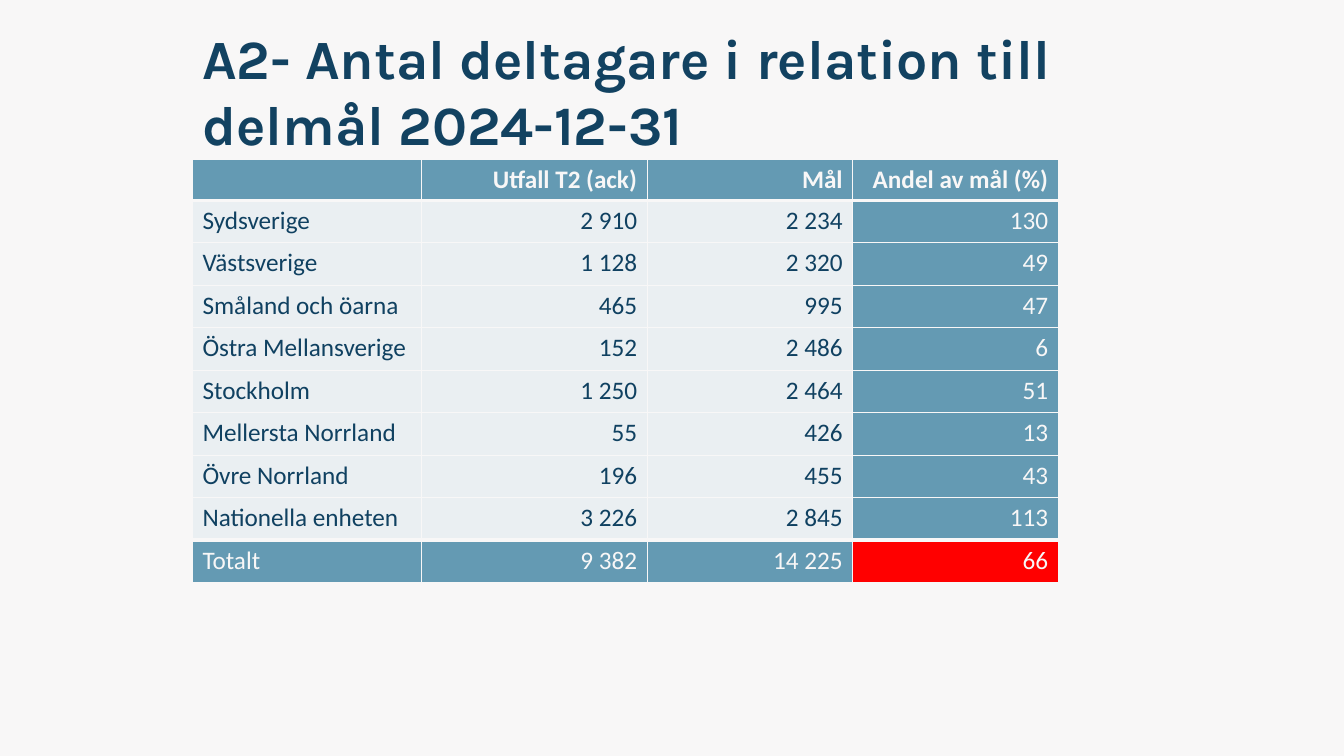
import pptx
import pptx.util
import pptx.dml.color
import pptx.enum.text
import pptx.oxml.ns
from dataclasses import dataclass
from lxml import etree
from pptx.util import Cm, Pt


@dataclass(frozen=True)
class Theme:
    light: str = "F8F7F7"
    title: str = "124261"
    text: str = "104161"
    blue: str = "649AB3"
    pale: str = "EAEFF2"
    alert: str = "FF0000"
    title_font: str = "Karla"
    body_font: str = "Calibri"
    title_size: float = 39.6
    body_size: float = 18


theme = Theme()
rgb = pptx.dml.color.RGBColor.from_string
ALIGN = pptx.enum.text.PP_ALIGN


def style(p, font, size, color, bold):
    for r in p.runs:
        r.font.name = font
        r.font.size = Pt(size)
        r.font.color.rgb = rgb(color)
        r.font.bold = bold


def set_borders(cell, color, top, bottom):
    """Draw all four cell borders; top and bottom are widths in points."""
    tcPr = cell._tc.get_or_add_tcPr()
    widths = {"lnL": 1, "lnR": 1, "lnT": top, "lnB": bottom}
    for i, (tag, width) in enumerate(widths.items()):
        ln = etree.Element(pptx.oxml.ns.qn(f"a:{tag}"), w=str(Pt(width)))
        fill = etree.SubElement(ln, pptx.oxml.ns.qn("a:solidFill"))
        etree.SubElement(fill, pptx.oxml.ns.qn("a:srgbClr"), val=color)
        tcPr.insert(i, ln)


prs = pptx.Presentation()
prs.slide_width, prs.slide_height = Cm(33.87), Cm(19.05)
s = prs.slides.add_slide(prs.slide_layouts[6])
s.background.fill.solid()
s.background.fill.fore_color.rgb = rgb(theme.light)

# Title
title = s.shapes.add_textbox(Cm(4.85), Cm(1.02), Cm(22.45), Cm(2.51))
tf = title.text_frame
tf.word_wrap = True
tf.vertical_anchor = pptx.enum.text.MSO_ANCHOR.MIDDLE
tf.text = "A2- Antal deltagare i relation till delmål 2024-12-31"
style(tf.paragraphs[0], theme.title_font, theme.title_size, theme.title, True)

# Table of participants against target
rows = [
    ("", "Utfall T2 (ack)", "Mål", "Andel av mål (%)"),
    ("Sydsverige", "2 910", "2 234", "130"),
    ("Västsverige", "1 128", "2 320", "49"),
    ("Småland och öarna", "465", "995", "47"),
    ("Östra Mellansverige", "152", "2 486", "6"),
    ("Stockholm", "1 250", "2 464", "51"),
    ("Mellersta Norrland", "55", "426", "13"),
    ("Övre Norrland", "196", "455", "43"),
    ("Nationella enheten", "3 226", "2 845", "113"),
    ("Totalt", "9 382", "14 225", "66"),
]
col_widths = [5.77, 5.69, 5.18, 5.18]
header_height, row_height = 1.03, 1.07
last_row, last_col = len(rows) - 1, len(col_widths) - 1

table = s.shapes.add_table(
    len(rows), len(col_widths), Cm(4.85), Cm(4.02),
    Cm(sum(col_widths)), Cm(header_height + last_row * row_height)).table
for col, width in zip(table.columns, col_widths):
    col.width = Cm(width)

for i, values in enumerate(rows):
    table.rows[i].height = Cm(row_height if i else header_height)
    for j, value in enumerate(values):
        cell = table.cell(i, j)
        strong = i in (0, last_row) or j == last_col
        fill = theme.blue if strong else theme.pale
        if (i, j) == (last_row, last_col):
            fill = theme.alert
        cell.fill.solid()
        cell.fill.fore_color.rgb = rgb(fill)
        set_borders(cell, theme.light,
                    top=3 if i in (1, last_row) else 1,
                    bottom=3 if i in (0, last_row - 1) else 1)
        cell.text = value
        p = cell.text_frame.paragraphs[0]
        p.alignment = ALIGN.RIGHT if j else ALIGN.LEFT
        p.font.size = Pt(theme.body_size)
        style(p, theme.body_font, theme.body_size,
              theme.light if strong else theme.text, i == 0)

prs.save("out.pptx")
